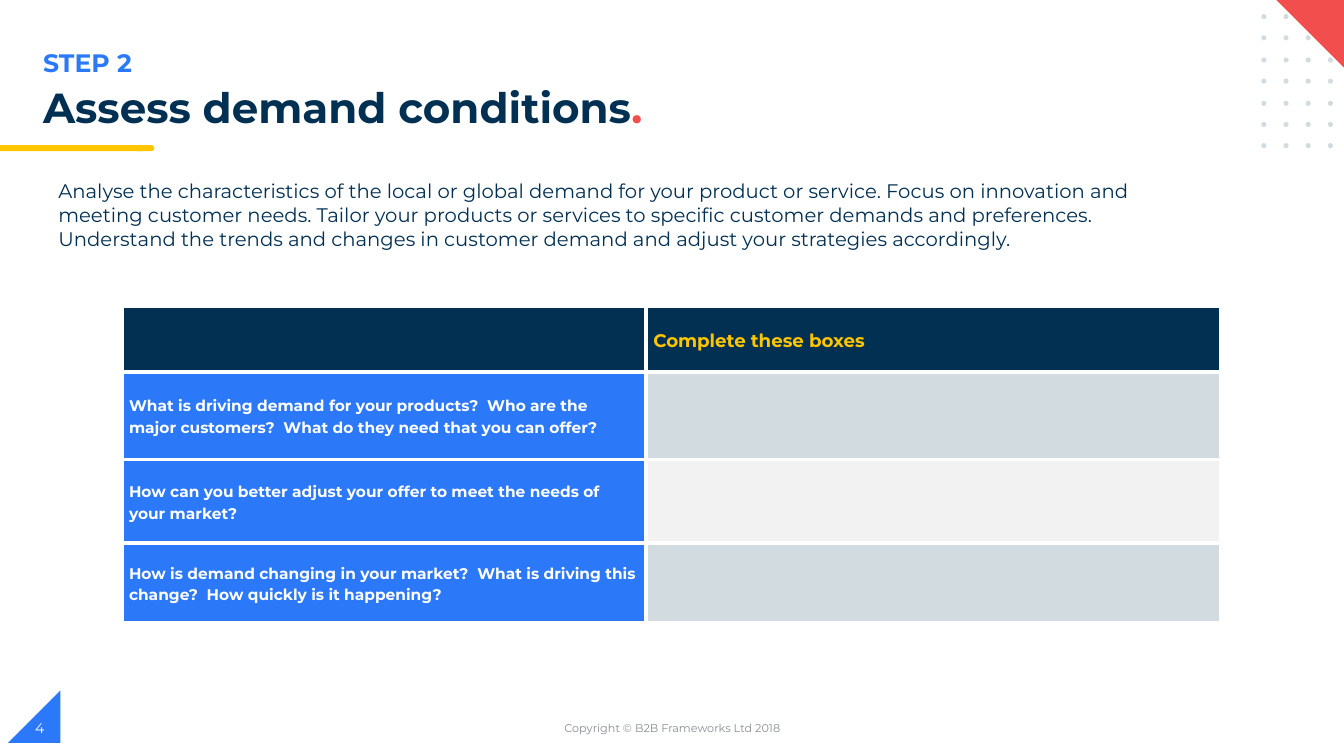
from dataclasses import dataclass

import lxml.etree
import pptx
import pptx.dml.color
import pptx.enum.shapes
import pptx.enum.text
import pptx.oxml.ns
import pptx.util

EMU_PER_PX = 9144
FONT = "Montserrat"
COLOURS = {
    "navy": "023053",
    "blue": "2B79F8",
    "yellow": "FFC600",
    "red": "F24E4E",
    "mist": "D1DBE0",
    "pale": "F2F2F2",
    "grey": "888C97",
    "white": "FFFFFF",
}
SHAPES = pptx.enum.shapes.MSO_SHAPE
ALIGN = pptx.enum.text.PP_ALIGN
ANCHOR = pptx.enum.text.MSO_ANCHOR


@dataclass(frozen=True)
class Box:
    left: int
    top: int
    width: int
    height: int


@dataclass(frozen=True)
class Decoration:
    kind: SHAPES
    box: Box
    colour: str
    rotation: int = 0


@dataclass(frozen=True)
class Label:
    text: str
    box: Box
    size: int
    colour: str
    bold: bool = False
    anchor: ANCHOR = ANCHOR.TOP
    align: ALIGN = ALIGN.LEFT
    line_spacing: float = 1.0
    accent: str = ""


@dataclass(frozen=True)
class TableRow:
    height: int
    prompt: str
    answer: str
    prompt_fill: str
    answer_fill: str


DOTS = [
    Decoration(SHAPES.OVAL, Box(1251 + 22 * column, round(14 + 21.4 * row), 5, 5), "mist")
    for row in range(7)
    for column in range(4)
]
DECORATIONS = [
    Decoration(SHAPES.RIGHT_TRIANGLE, Box(8, 685, 52, 52), "blue", 270),
    Decoration(SHAPES.FLOWCHART_TERMINATOR, Box(134, 144, 19, 6), "yellow"),
    Decoration(SHAPES.RECTANGLE, Box(0, 144, 141, 6), "yellow"),
    *DOTS,
    Decoration(SHAPES.RIGHT_TRIANGLE, Box(1265, -1, 72, 72), "red", 180),
]
LABELS = [
    Label("STEP 2", Box(33, 42, 669, 40), 18, "blue", bold=True),
    Label("Assess demand conditions", Box(33, 82, 1115, 56), 30, "navy", bold=True,
          line_spacing=0.9, accent="."),
    Label(
        "Analyse the characteristics of the local or global demand for your product or service. "
        "Focus on innovation and meeting customer needs. Tailor your products or services to "
        "specific customer demands and preferences. Understand the trends and changes in customer "
        "demand and adjust your strategies accordingly.",
        Box(48, 173, 1159, 81), 14, "navy"),
    Label("Copyright © B2B Frameworks Ltd 2018", Box(442, 702, 450, 40), 8, "grey",
          anchor=ANCHOR.MIDDLE, align=ALIGN.CENTER),
    Label("4", Box(25, 702, 300, 40), 10, "white", anchor=ANCHOR.MIDDLE),
]
COLUMN_WIDTHS = [520, 570]
TABLE_ROWS = [
    TableRow(65, "", "Complete these boxes", "navy", "navy"),
    TableRow(87, "What is driving demand for your products?  Who are the major customers?  "
             "What do they need that you can offer?", "", "blue", "mist"),
    TableRow(83, "How can you better adjust your offer to meet the needs of your market?",
             "", "blue", "pale"),
    TableRow(79, "How is demand changing in your market?  What is driving this change?  "
             "How quickly is it happening?", "", "blue", "mist"),
]


def px(length: int) -> pptx.util.Emu:
    return pptx.util.Emu(length * EMU_PER_PX)


def rgb(colour: str) -> pptx.dml.color.RGBColor:
    return pptx.dml.color.RGBColor.from_string(COLOURS[colour])


def place(box: Box) -> tuple:
    return px(box.left), px(box.top), px(box.width), px(box.height)


def set_font(font, size: int, colour: str, bold: bool) -> None:
    font.name = FONT
    font.size = pptx.util.Pt(size)
    font.bold = bold
    font.color.rgb = rgb(colour)


def draw_decoration(slide, decoration: Decoration) -> None:
    shape = slide.shapes.add_shape(decoration.kind, *place(decoration.box))
    shape.shadow.inherit = False
    shape.fill.solid()
    shape.fill.fore_color.rgb = rgb(decoration.colour)
    shape.line.fill.background()
    shape.rotation = decoration.rotation


def draw_label(slide, label: Label) -> None:
    frame = slide.shapes.add_textbox(*place(label.box)).text_frame
    frame.word_wrap = True
    frame.vertical_anchor = label.anchor
    paragraph = frame.paragraphs[0]
    paragraph.alignment = label.align
    paragraph.line_spacing = label.line_spacing
    paragraph.add_run().text = label.text
    set_font(paragraph.font, label.size, label.colour, label.bold)
    if label.accent:
        accent = paragraph.add_run()
        accent.text = label.accent
        accent.font.color.rgb = rgb("red")


def add_borders(cell) -> None:
    qn = pptx.oxml.ns.qn
    properties = cell._tc.get_or_add_tcPr()
    for position, side in enumerate(("lnL", "lnR", "lnT", "lnB")):
        border = lxml.etree.Element(qn(f"a:{side}"), w=str(pptx.util.Pt(3)))
        fill = lxml.etree.SubElement(border, qn("a:solidFill"))
        lxml.etree.SubElement(fill, qn("a:srgbClr"), val=COLOURS["white"])
        properties.insert(position, border)


def fill_cell(cell, text: str, fill: str, size: int, colour: str) -> None:
    cell.fill.solid()
    cell.fill.fore_color.rgb = rgb(fill)
    cell.vertical_anchor = ANCHOR.MIDDLE
    cell.margin_left = cell.margin_right = px(7)
    cell.margin_top = cell.margin_bottom = 0
    paragraph = cell.text_frame.paragraphs[0]
    paragraph.line_spacing = 1.15
    if text:
        paragraph.text = text
        set_font(paragraph.font, size, colour, True)
    add_borders(cell)


def draw_table(slide) -> None:
    box = Box(121, 304, sum(COLUMN_WIDTHS), sum(row.height for row in TABLE_ROWS))
    table = slide.shapes.add_table(len(TABLE_ROWS), len(COLUMN_WIDTHS), *place(box)).table
    table.first_row = False
    table.horz_banding = False
    for column, width in zip(table.columns, COLUMN_WIDTHS):
        column.width = px(width)
    for index, row in enumerate(TABLE_ROWS):
        table.rows[index].height = px(row.height)
        fill_cell(table.cell(index, 0), row.prompt, row.prompt_fill, 11, "white")
        fill_cell(table.cell(index, 1), row.answer, row.answer_fill, 13, "yellow")


def main() -> None:
    presentation = pptx.Presentation()
    presentation.slide_width = px(1333)
    presentation.slide_height = px(750)
    slide = presentation.slides.add_slide(presentation.slide_layouts[6])
    for decoration in DECORATIONS:
        draw_decoration(slide, decoration)
    for label in LABELS:
        draw_label(slide, label)
    draw_table(slide)
    presentation.save("out.pptx")


if __name__ == "__main__":
    main()
